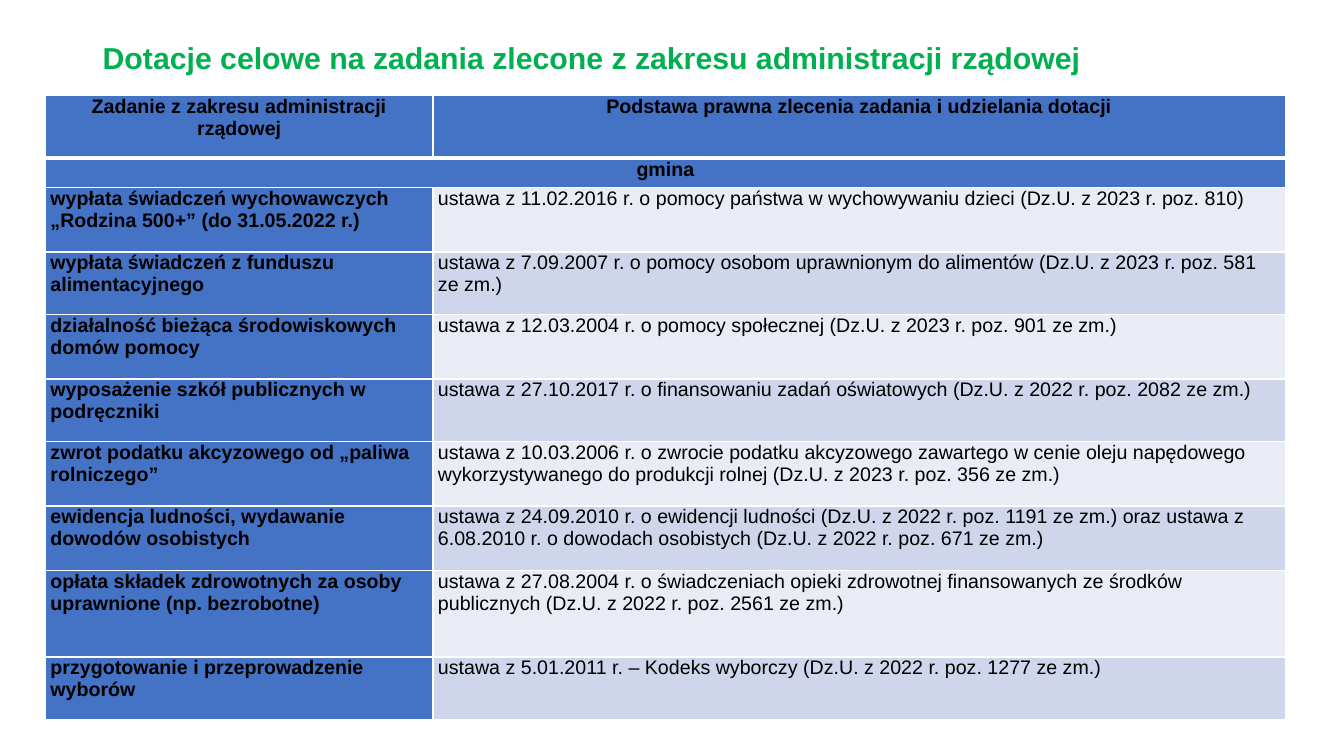
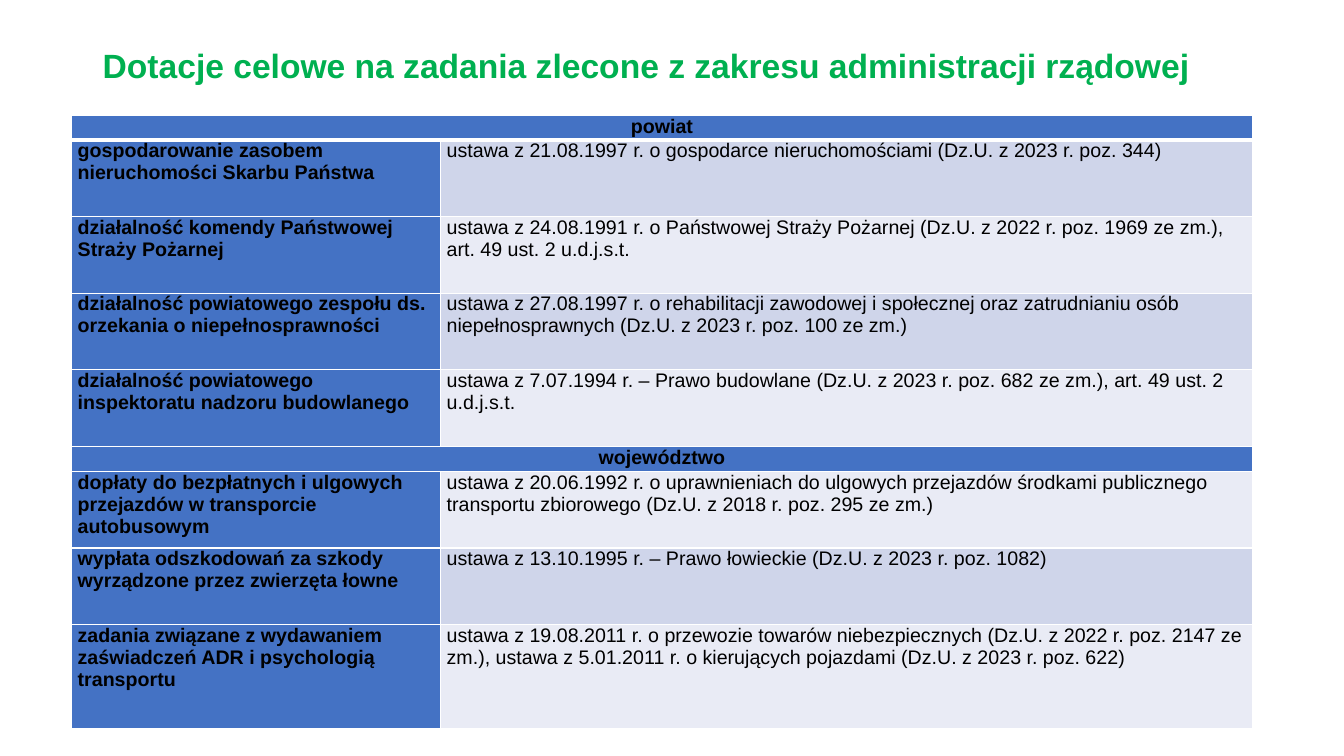
"""Build two slides of tables on grants for commissioned government tasks."""
from dataclasses import dataclass

from lxml import etree
from pptx import Presentation
from pptx import util as u
from pptx.dml import color
from pptx.enum import text
from pptx.oxml import ns


@dataclass(frozen=True)
class Theme:
    font: str = "Arial"
    title: str = "00B050"
    ink: str = "000000"
    line: str = "FFFFFF"
    accent: str = "4472C4"
    bands: tuple = ("E9EBF5", "CFD5EA")
    body_size: float = 14
    thin: float = 1
    thick: float = 3
    first_column: float = 5 / 16


theme = Theme()
title_text = "Dotacje celowe na zadania zlecone z zakresu administracji rządowej"

pages = [
    {
        "title": (4.93, 6, 21.6),
        "table": (3.38, 12.67, 92.27),
        "inset": 0.05,
        "rows": [
            (8.27, "Zadanie z zakresu administracji rządowej",
             "Podstawa prawna zlecenia zadania i udzielania dotacji"),
            (3.87, "gmina"),
            (8.53, "wypłata świadczeń wychowawczych „Rodzina 500+” (do 31.05.2022 r.)",
             "ustawa z 11.02.2016 r. o pomocy państwa w wychowywaniu dzieci (Dz.U. z 2023 r. poz. 810)"),
            (8.27, "wypłata świadczeń z funduszu alimentacyjnego",
             "ustawa z 7.09.2007 r. o pomocy osobom uprawnionym do alimentów "
             "(Dz.U. z 2023 r. poz. 581 ze zm.)"),
            (8.53, "działalność bieżąca środowiskowych domów pomocy",
             "ustawa z 12.03.2004 r. o pomocy społecznej (Dz.U. z 2023 r. poz. 901 ze zm.)"),
            (8.27, "wyposażenie szkół publicznych w podręczniki",
             "ustawa z 27.10.2017 r. o finansowaniu zadań oświatowych (Dz.U. z 2022 r. poz. 2082 ze zm.)"),
            (8.53, "zwrot podatku akcyzowego od „paliwa rolniczego”",
             "ustawa z 10.03.2006 r. o zwrocie podatku akcyzowego zawartego w cenie oleju napędowego "
             "wykorzystywanego do produkcji rolnej (Dz.U. z 2023 r. poz. 356 ze zm.)"),
            (8.53, "ewidencja ludności, wydawanie dowodów osobistych",
             "ustawa z 24.09.2010 r. o ewidencji ludności (Dz.U. z 2022 r. poz. 1191 ze zm.) oraz "
             "ustawa z 6.08.2010 r. o dowodach osobistych (Dz.U. z 2022 r. poz. 671 ze zm.)"),
            (11.47, "opłata składek zdrowotnych za osoby uprawnione (np. bezrobotne)",
             "ustawa z 27.08.2004 r. o świadczeniach opieki zdrowotnej finansowanych ze środków "
             "publicznych (Dz.U. z 2022 r. poz. 2561 ze zm.)"),
            (8.27, "przygotowanie i przeprowadzenie wyborów",
             "ustawa z 5.01.2011 r. – Kodeks wyborczy (Dz.U. z 2022 r. poz. 1277 ze zm.)"),
        ],
    },
    {
        "title": (5.33, 7.33, 24),
        "table": (5.33, 15.33, 87.85),
        "inset": 0.06,
        "rows": [
            (3.2, "powiat"),
            (10.13, "gospodarowanie zasobem nieruchomości Skarbu Państwa",
             "ustawa z 21.08.1997 r. o gospodarce nieruchomościami (Dz.U. z 2023 r. poz. 344)"),
            (10.13, "działalność komendy Państwowej Straży Pożarnej",
             "ustawa z 24.08.1991 r. o Państwowej Straży Pożarnej (Dz.U. z 2022 r. poz. 1969 ze zm.), "
             "art. 49 ust. 2 u.d.j.s.t."),
            (10.13, "działalność powiatowego zespołu ds. orzekania o niepełnosprawności",
             "ustawa z 27.08.1997 r. o rehabilitacji zawodowej i społecznej oraz zatrudnianiu osób "
             "niepełnosprawnych (Dz.U. z 2023 r. poz. 100 ze zm.)"),
            (10.13, "działalność powiatowego inspektoratu nadzoru budowlanego",
             "ustawa z 7.07.1994 r. – Prawo budowlane (Dz.U. z 2023 r. poz. 682 ze zm.), "
             "art. 49 ust. 2 u.d.j.s.t."),
            (3.33, "województwo"),
            (10.13, "dopłaty do bezpłatnych i ulgowych przejazdów w transporcie autobusowym",
             "ustawa z 20.06.1992 r. o uprawnieniach do ulgowych przejazdów środkami publicznego "
             "transportu zbiorowego (Dz.U. z 2018 r. poz. 295 ze zm.)"),
            (10.13, "wypłata odszkodowań za szkody wyrządzone przez zwierzęta łowne",
             "ustawa z 13.10.1995 r. – Prawo łowieckie (Dz.U. z 2023 r. poz. 1082)"),
            (13.73, "zadania związane z wydawaniem zaświadczeń ADR i psychologią transportu",
             "ustawa z 19.08.2011 r. o przewozie towarów niebezpiecznych (Dz.U. z 2022 r. poz. 2147 ze zm.), "
             "ustawa z 5.01.2011 r. o kierujących pojazdami (Dz.U. z 2023 r. poz. 622)"),
        ],
    },
]


def write(text_frame, content, size, ink, bold):
    text_frame.text = content
    paragraph = text_frame.paragraphs[0]
    for run in paragraph.runs:
        run.font.name = theme.font
        run.font.size = u.Pt(size)
        run.font.bold = bold
        run.font.color.rgb = color.RGBColor.from_string(ink)
    return paragraph


def draw_borders(cell, top, bottom):
    properties = cell._tc.get_or_add_tcPr()
    widths = {"a:lnL": theme.thin, "a:lnR": theme.thin, "a:lnT": top, "a:lnB": bottom}
    for tag, width in widths.items():
        line = etree.SubElement(properties, ns.qn(tag), w=str(u.Pt(width)))
        fill = etree.SubElement(line, ns.qn("a:solidFill"))
        etree.SubElement(fill, ns.qn("a:srgbClr"), val=theme.line)


presentation = Presentation()
presentation.slide_width = u.Inches(13.33)
presentation.slide_height = u.Inches(7.5)
column = presentation.slide_width / 100
row = presentation.slide_height / 100

for page in pages:
    slide = presentation.slides.add_slide(presentation.slide_layouts[6])

    top, height, size = page["title"]
    title = slide.shapes.add_textbox(
        int(6.9 * column), int(top * row), int(86.27 * column), int(height * row))
    title.text_frame.word_wrap = True
    title.text_frame.vertical_anchor = text.MSO_ANCHOR.MIDDLE
    write(title.text_frame, title_text, size, theme.title, True).line_spacing = 0.9

    left, top, width = page["table"]
    rows = page["rows"]
    height = sum(entry[0] for entry in rows)
    table = slide.shapes.add_table(
        len(rows), 2, int(left * column), int(top * row), int(width * column), int(height * row)).table
    table.horz_banding = False
    table.columns[0].width = int(width * theme.first_column * column)
    table.columns[1].width = int(width * (1 - theme.first_column) * column)

    for index, (height, *contents) in enumerate(rows):
        table.rows[index].height = int(height * row)
        heading = index == 0 or len(contents) == 1
        for position in range(2):
            cell = table.cell(index, position)
            cell.margin_left = cell.margin_right = u.Inches(page["inset"])
            cell.margin_top = cell.margin_bottom = 0
            draw_borders(cell, theme.thick if index == 1 else theme.thin,
                         theme.thick if index == 0 else theme.thin)
            dark = heading or position == 0
            cell.fill.solid()
            cell.fill.fore_color.rgb = color.RGBColor.from_string(
                theme.accent if dark else theme.bands[index % 2])
            if position < len(contents):
                paragraph = write(cell.text_frame, contents[position], theme.body_size, theme.ink, dark)
                paragraph.alignment = text.PP_ALIGN.CENTER if heading else text.PP_ALIGN.LEFT
        if len(contents) == 1:
            table.cell(index, 0).merge(table.cell(index, 1))

presentation.save("out.pptx")
